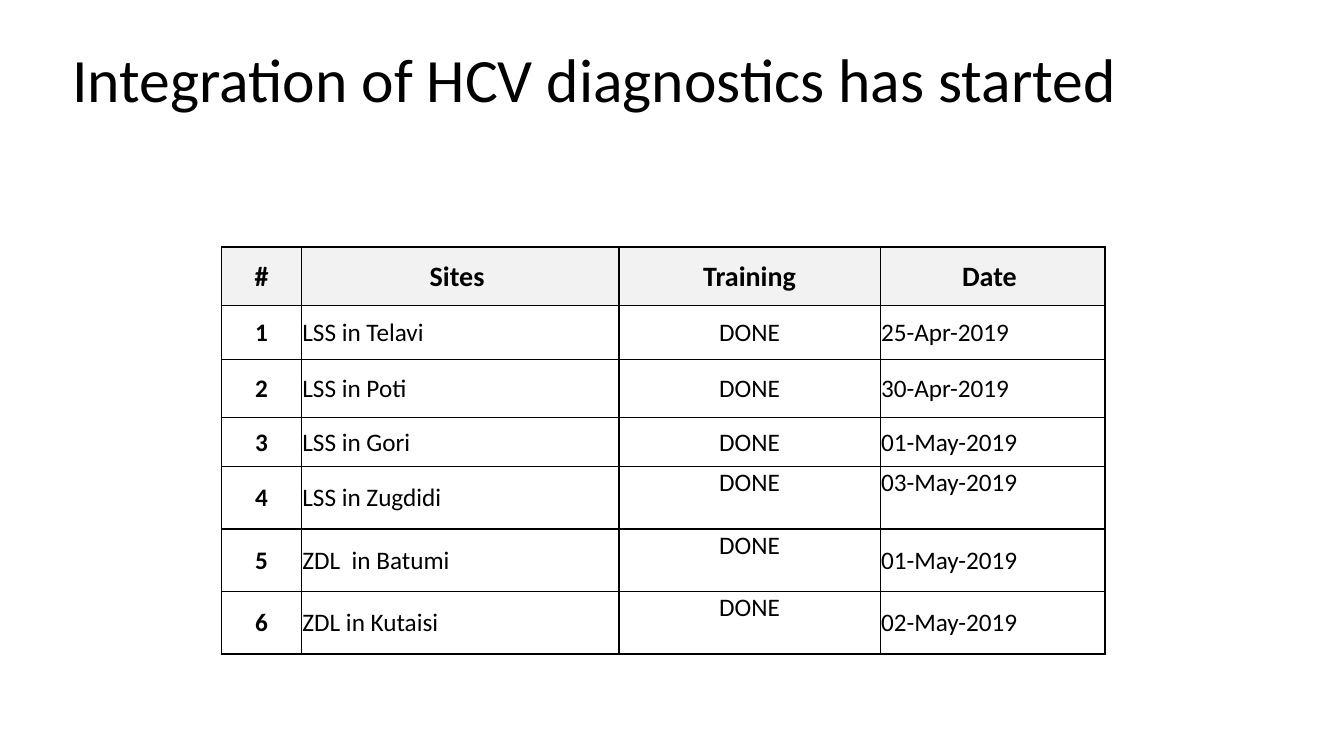
"""Build a slide with a table of the sites where HCV diagnostics training is done."""
from dataclasses import dataclass

from lxml import etree
from pptx import Presentation
from pptx.dml.color import RGBColor as RGB
from pptx.enum.text import MSO_ANCHOR as ANCHOR, PP_ALIGN as ALIGN
from pptx.oxml import parse_xml
from pptx.oxml.ns import nsdecls
from pptx.util import Inches, Pt


@dataclass(frozen=True)
class Theme:
    font: str = "Calibri"
    ink: str = "000000"
    paper: str = "FFFFFF"
    header: str = "F2F2F2"
    title_size: int = 44
    header_size: int = 20
    body_size: int = 18
    border: int = 1


T = Theme()


def write(tf, text, size=T.body_size, bold=False, align=ALIGN.LEFT, spacing=None):
    p = tf.paragraphs[0]
    p.alignment = align
    p.line_spacing = spacing
    r = p.add_run()
    r.text = text
    r.font.name = T.font
    r.font.size = Pt(size)
    r.font.bold = bold
    r.font.color.rgb = RGB.from_string(T.ink)


def add_borders(cell):
    tc_pr = cell._tc.get_or_add_tcPr()
    for i, side in enumerate("LRTB"):
        ln = parse_xml(f'<a:ln{side} {nsdecls("a")} w="{Pt(T.border)}"/>')
        fill = etree.SubElement(ln, ln.tag.replace(f"ln{side}", "solidFill"))
        etree.SubElement(fill, ln.tag.replace(f"ln{side}", "srgbClr"), val=T.ink)
        tc_pr.insert(i, ln)


prs = Presentation()
prs.slide_width, prs.slide_height = Inches(13.33), Inches(7.5)
s = prs.slides.add_slide(prs.slide_layouts[6])
s.background.fill.solid()
s.background.fill.fore_color.rgb = RGB.from_string(T.paper)

col_widths = [0.79, 3.15, 2.59, 2.23]
row_heights = [0.58, 0.54, 0.57, 0.49] + [0.62] * 3
headers = ["#", "Sites ", "Training", "Date "]
sites = [
    ("LSS in Telavi", "25-Apr-2019"),
    ("LSS in Poti", "30-Apr-2019"),
    ("LSS in Gori", "01-May-2019"),
    ("LSS in Zugdidi", "03-May-2019"),
    ("ZDL  in Batumi", "01-May-2019"),
    ("ZDL in Kutaisi", "02-May-2019"),
]
rows = [headers] + [[str(n), site, "DONE", date] for n, (site, date) in enumerate(sites, 1)]
top_cells = {(4, 2), (4, 3), (5, 2), (6, 2)}

frame = s.shapes.add_table(len(rows), len(headers), Inches(2.2), Inches(2.45),
                           Inches(sum(col_widths)), Inches(sum(row_heights)))
table = frame.table
for col, width in zip(table.columns, col_widths):
    col.width = Inches(width)
for row, height in zip(table.rows, row_heights):
    row.height = Inches(height)

for i, values in enumerate(rows):
    for j, text in enumerate(values):
        cell = table.cell(i, j)
        is_header = i == 0
        cell.margin_left = cell.margin_right = cell.margin_top = Inches(0.01)
        cell.margin_bottom = 0
        cell.vertical_anchor = ANCHOR.TOP if (i, j) in top_cells else ANCHOR.MIDDLE
        cell.fill.solid()
        cell.fill.fore_color.rgb = RGB.from_string(T.header if is_header else T.paper)
        add_borders(cell)
        write(cell.text_frame, text,
              size=T.header_size if is_header else T.body_size,
              bold=is_header or j == 0,
              align=ALIGN.CENTER if is_header or j in (0, 2) else ALIGN.LEFT)

title = s.shapes.add_textbox(Inches(0.62), Inches(0.39), Inches(10.76), Inches(0.86))
tf = title.text_frame
tf.word_wrap = True
tf.vertical_anchor = ANCHOR.MIDDLE
write(tf, "Integration of HCV diagnostics has started", size=T.title_size, spacing=0.9)

prs.save("out.pptx")
